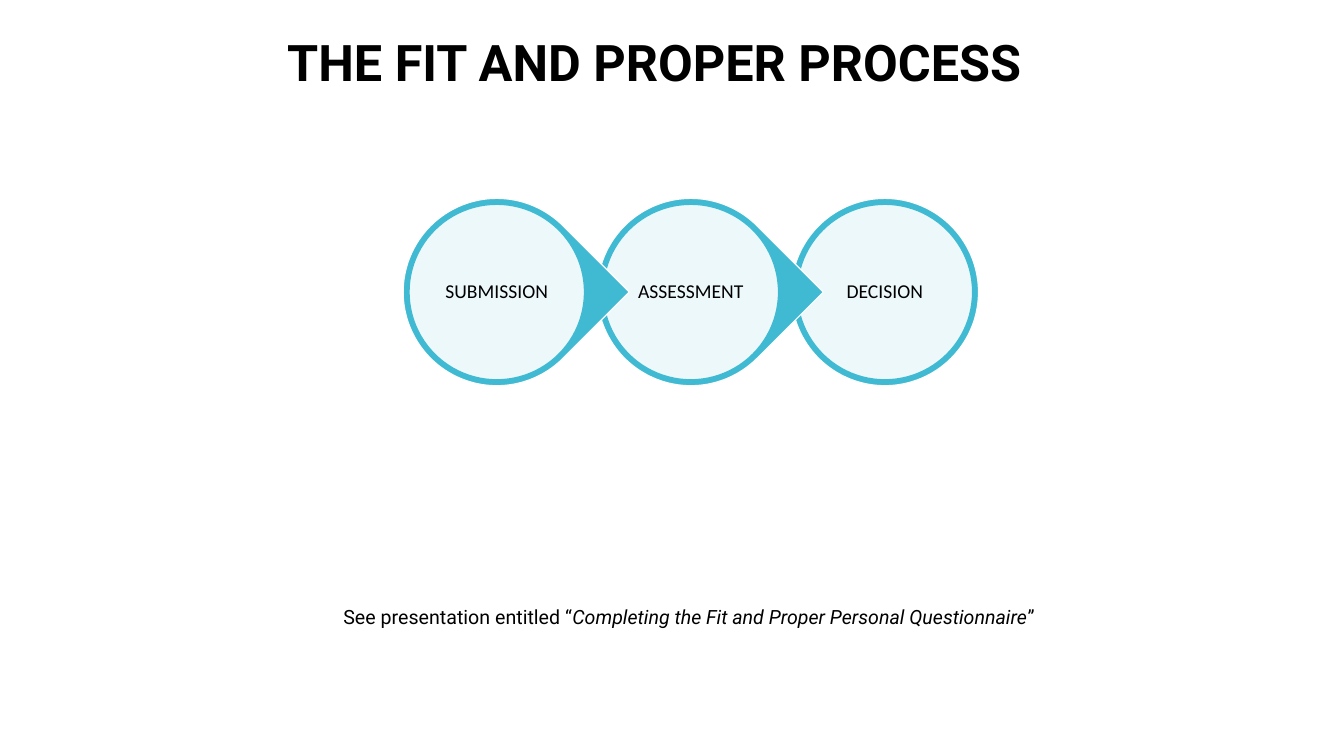
"""Build the slide on the fit and proper process."""
import dataclasses

import lxml.etree
import pptx
import pptx.dml.color
import pptx.enum.shapes
import pptx.enum.text
import pptx.oxml.ns
import pptx.util
from pptx.util import Cm

SHAPE = pptx.enum.shapes.MSO_SHAPE
ANCHOR = pptx.enum.text.MSO_ANCHOR


@dataclasses.dataclass(frozen=True)
class Theme:
    """Colours, fonts and type sizes of the slide."""
    accent: str = "40BAD2"
    paper: str = "FFFFFF"
    ink: str = "000000"
    heading_font: str = "Roboto"
    stage_font: str = "Calibri"
    title_size: int = 36
    body_size: int = 14
    line_width: float = 0.85


THEME = Theme()
STAGES = ["SUBMISSION", "ASSESSMENT", "DECISION"]


def colour(code):
    """Turn a hex code into a colour."""
    return pptx.dml.color.RGBColor.from_string(code)


def add_text(shapes, place, spans, font=THEME.heading_font, size=THEME.body_size,
             bold=False, anchor=ANCHOR.TOP, margin=Cm(0), spacing=None, wrap=True):
    """Add a centred text box whose spans are (text, italic) pairs."""
    box = shapes.add_textbox(*place)
    frame = box.text_frame
    frame.word_wrap = wrap
    frame.vertical_anchor = anchor
    frame.margin_left = frame.margin_right = margin
    frame.margin_top = frame.margin_bottom = margin
    if not wrap:
        frame.auto_size = pptx.enum.text.MSO_AUTO_SIZE.SHAPE_TO_FIT_TEXT
    para = frame.paragraphs[0]
    para.alignment = pptx.enum.text.PP_ALIGN.CENTER
    para.line_spacing = spacing
    for text, italic in spans:
        span = para.add_run()
        span.text = text
        span.font.name = font
        span.font.size = pptx.util.Pt(size)
        span.font.bold = bold
        span.font.italic = italic
        span.font.color.rgb = colour(THEME.ink)


def add_disc(shapes, kind, left, top, size, fill, line):
    """Add a square preset shape with a thin outline."""
    disc = shapes.add_shape(kind, left, top, size, size)
    disc.shadow.inherit = False
    disc.fill.solid()
    disc.fill.fore_color.rgb = colour(fill)
    disc.line.color.rgb = colour(line)
    disc.line.width = pptx.util.Pt(THEME.line_width)
    return disc


def set_opacity(shape, percent):
    """Make the solid fill of a shape partly transparent."""
    qn = pptx.oxml.ns.qn
    fill = shape.fill.fore_color._xFill
    alpha = lxml.etree.SubElement(fill.find(qn("a:srgbClr")), qn("a:alpha"))
    alpha.set("val", str(percent * 1000))


def add_stage(shapes, left, top, size, label, is_last):
    """Draw one stage: a ring, pointed unless last, around its label."""
    kind = SHAPE.OVAL if is_last else SHAPE.TEAR
    ring = add_disc(shapes, kind, left, top, size, THEME.accent, THEME.paper)
    if not is_last:
        ring.rotation = 45
    rim, pad = Cm(0.15), Cm(0.79)
    face = add_disc(shapes, SHAPE.OVAL, left + rim, top + rim, size - 2 * rim,
                    THEME.paper, THEME.accent)
    set_opacity(face, 90)
    place = (left + pad, top + pad, size - 2 * pad, size - 2 * pad)
    add_text(shapes, place, [(label, False)], font=THEME.stage_font,
             anchor=ANCHOR.MIDDLE, margin=Cm(0.05), spacing=0.9)


def add_process(page, left, top, width, height):
    """Spread the stages over a box, each point lying over the next ring."""
    shapes = page.shapes.add_group_shape().shapes
    last = len(STAGES) - 1
    pitch = (width - height) // last
    for index, label in reversed(list(enumerate(STAGES))):
        add_stage(shapes, left + index * pitch, top, height, label, index == last)


def add_title(page, *place):
    """Write the slide title."""
    add_text(page.shapes, place, [("THE FIT AND PROPER PROCESS", False)],
             size=THEME.title_size, bold=True, anchor=ANCHOR.MIDDLE,
             spacing=pptx.util.Pt(40))


def add_reference(page, *place):
    """Write the pointer to the related presentation."""
    spans = [("See presentation entitled “", False),
             ("Completing the Fit and Proper Personal Questionnaire", True),
             ("”", False)]
    add_text(page.shapes, place, spans, wrap=False)


def main():
    """Build and save the deck."""
    deck = pptx.Presentation()
    deck.slide_width, deck.slide_height = Cm(33.87), Cm(19.05)
    page = deck.slides.add_slide(deck.slide_layouts[6])
    add_title(page, Cm(2.29), Cm(0), Cm(28.4), Cm(3.23))
    add_reference(page, Cm(8.41), Cm(15.24), Cm(17.91), Cm(0.61))
    add_process(page, Cm(10.16), Cm(5), Cm(14.5), Cm(4.72))
    deck.save("out.pptx")


if __name__ == "__main__":
    main()
